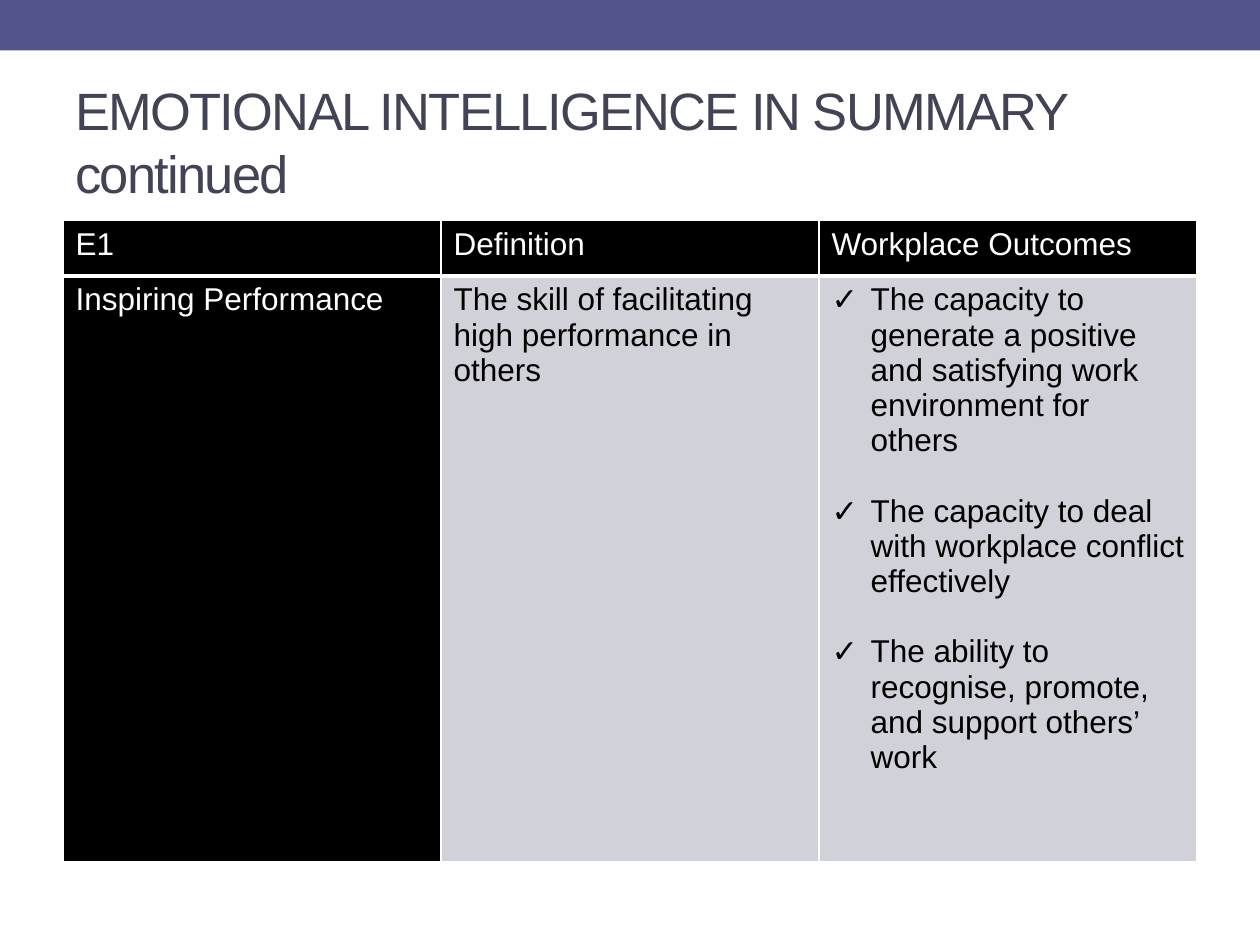
import pptx
import pptx.dml.color
import pptx.enum.shapes
import pptx.enum.text
import pptx.oxml
import pptx.oxml.ns
import pptx.util

Inches = pptx.util.Inches
Pt = pptx.util.Pt
RGBColor = pptx.dml.color.RGBColor

FONT = "Arial"
BAND = RGBColor(0x53, 0x54, 0x8A)
TITLE = RGBColor(0x42, 0x44, 0x56)
BLACK = RGBColor(0, 0, 0)
WHITE = RGBColor(0xFF, 0xFF, 0xFF)
PALE = RGBColor(0xD1, 0xD1, 0xDA)

HEADERS = ["E1", "Definition", "Workplace Outcomes"]
SKILL = "Inspiring Performance"
DEFINITION = "The skill of facilitating high performance in others"
OUTCOMES = [
    "The capacity to generate a positive and satisfying work environment for others",
    "The capacity to deal with workplace conflict effectively",
    "The ability to recognise, promote, and support others’ work",
]


def format_runs(p, size, color):
    for r in p.runs:
        r.font.name = FONT
        r.font.size = Pt(size)
        r.font.color.rgb = color


def add_band(s):
    sp = s.shapes.add_shape(
        pptx.enum.shapes.MSO_SHAPE.RECTANGLE, 0, 0, Inches(10), Inches(0.4))
    sp.shadow.inherit = False
    sp.fill.solid()
    sp.fill.fore_color.rgb = BAND
    sp.line.fill.background()


def add_title(s, text):
    sp = s.shapes.add_textbox(Inches(0.5), Inches(0.58), Inches(9), Inches(1.08))
    tf = sp.text_frame
    tf.word_wrap = True
    tf.vertical_anchor = pptx.enum.text.MSO_ANCHOR.MIDDLE
    p = tf.paragraphs[0]
    p.text = text
    format_runs(p, 30, TITLE)
    p.runs[0].font._element.set("spc", "-100")


def set_border(cell, side, width):
    ln = pptx.oxml.parse_xml(
        f'<a:ln{side} {pptx.oxml.ns.nsdecls("a")} w="{Pt(width)}">'
        f'<a:solidFill><a:srgbClr val="{WHITE}"/></a:solidFill></a:ln{side}>')
    cell._tc.get_or_add_tcPr().append(ln)


def set_bullet(p):
    pPr = p._p.get_or_add_pPr()
    pPr.set("marL", str(Inches(0.31)))
    pPr.set("indent", str(Inches(-0.31)))
    for xml in (f'<a:buFont {pptx.oxml.ns.nsdecls("a")} typeface="{FONT}"/>',
                f'<a:buChar {pptx.oxml.ns.nsdecls("a")} char="✓"/>'):
        pPr.append(pptx.oxml.parse_xml(xml))


def fill_cell(cell, text, fill, color, bottom=1):
    for side, width in (("L", 1), ("R", 1), ("T", 1), ("B", bottom)):
        set_border(cell, side, width)
    cell.fill.solid()
    cell.fill.fore_color.rgb = fill
    cell.text_frame.text = text
    for p in cell.text_frame.paragraphs:
        format_runs(p, 18, color)


def add_summary_table(s):
    table = s.shapes.add_table(
        2, 3, Inches(0.5), Inches(1.75), Inches(9), Inches(5.08)).table
    for column in table.columns:
        column.width = Inches(3)
    table.rows[0].height = Inches(0.44)
    table.rows[1].height = Inches(4.65)
    for col, header in enumerate(HEADERS):
        fill_cell(table.cell(0, col), header, BLACK, WHITE, bottom=3)
    fill_cell(table.cell(1, 0), SKILL, BLACK, WHITE)
    fill_cell(table.cell(1, 1), DEFINITION, PALE, BLACK)
    outcomes = table.cell(1, 2)
    fill_cell(outcomes, "\n".join(OUTCOMES), PALE, BLACK)
    for i, p in enumerate(outcomes.text_frame.paragraphs):
        if i:
            p.space_before = Pt(20)
        set_bullet(p)


def main():
    prs = pptx.Presentation()
    prs.slide_width = Inches(10)
    prs.slide_height = Inches(7.5)
    s = prs.slides.add_slide(prs.slide_layouts[6])
    add_band(s)
    add_title(s, "EMOTIONAL INTELLIGENCE IN SUMMARY continued")
    add_summary_table(s)
    prs.save("out.pptx")


if __name__ == "__main__":
    main()
